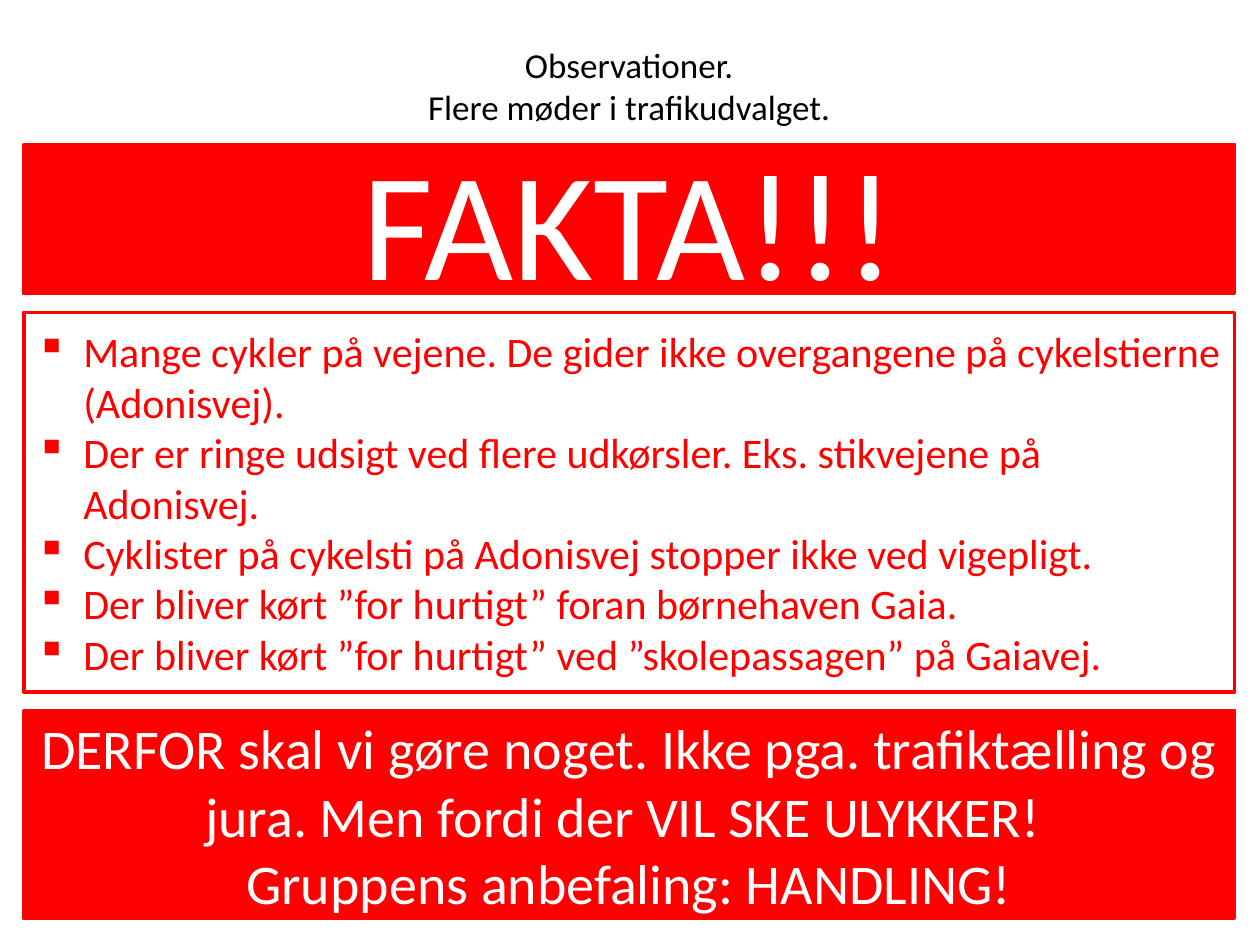
from lxml.etree import SubElement
from pptx import Presentation
from pptx.dml.color import RGBColor
from pptx.enum.shapes import MSO_SHAPE as SHAPE
from pptx.enum.text import MSO_ANCHOR as ANCHOR, PP_ALIGN as ALIGN
from pptx.oxml.ns import qn
from pptx.util import Cm, Pt

RED = RGBColor(0xFF, 0x00, 0x00)
WHITE = RGBColor(0xFF, 0xFF, 0xFF)
BLACK = RGBColor(0x00, 0x00, 0x00)
LEFT, WIDTH = Cm(0.48), Cm(24.41)


def write(s, lines, size, color, align):
    tf = s.text_frame
    tf.word_wrap = True
    tf.vertical_anchor = ANCHOR.MIDDLE
    tf.text = "\n".join(lines)
    for p in tf.paragraphs:
        p.alignment = align
        for r in p.runs:
            r.font.name = "Calibri"
            r.font.size = Pt(size)
            r.font.color.rgb = color


def add_box(top, height, filled):
    s = slide.shapes.add_shape(SHAPE.RECTANGLE, LEFT, Cm(top), WIDTH, Cm(height))
    s.shadow.inherit = False
    if filled:
        s.fill.solid()
        s.fill.fore_color.rgb = RED
    else:
        s.fill.background()
    s.line.color.rgb = RED
    s.line.width = Pt(2)
    return s


prs = Presentation()
prs.slide_width, prs.slide_height = Cm(25.4), Cm(19.05)
slide = prs.slides.add_slide(prs.slide_layouts[6])

heading = slide.shapes.add_textbox(LEFT, Cm(0.53), WIDTH, Cm(2.39))
write(heading, ["Observationer.", "Flere møder i trafikudvalget."], 20, BLACK, ALIGN.CENTER)

banner = add_box(2.92, 3, True)
write(banner, ["FAKTA!!!"], 88, WHITE, ALIGN.CENTER)

facts = add_box(6.3, 7.65, False)
write(facts, [
    "Mange cykler på vejene. De gider ikke overgangene på cykelstierne (Adonisvej).",
    "Der er ringe udsigt ved flere udkørsler. Eks. stikvejene på Adonisvej.",
    "Cyklister på cykelsti på Adonisvej stopper ikke ved vigepligt.",
    "Der bliver kørt ”for hurtigt” foran børnehaven Gaia.",
    "Der bliver kørt ”for hurtigt” ved ”skolepassagen” på Gaiavej.",
], 24, RED, ALIGN.LEFT)
for p in facts.text_frame.paragraphs:
    pPr = p._p.get_or_add_pPr()
    pPr.set("marL", str(Cm(0.95)))
    pPr.set("indent", str(-Cm(0.95)))
    SubElement(pPr, qn("a:buChar")).set("char", "▪")

conclusion = add_box(14.33, 4.19, True)
write(conclusion, [
    "DERFOR skal vi gøre noget. Ikke pga. trafiktælling og jura. Men fordi der VIL SKE ULYKKER! ",
    "Gruppens anbefaling: HANDLING!",
], 32, WHITE, ALIGN.CENTER)

prs.save("out.pptx")
